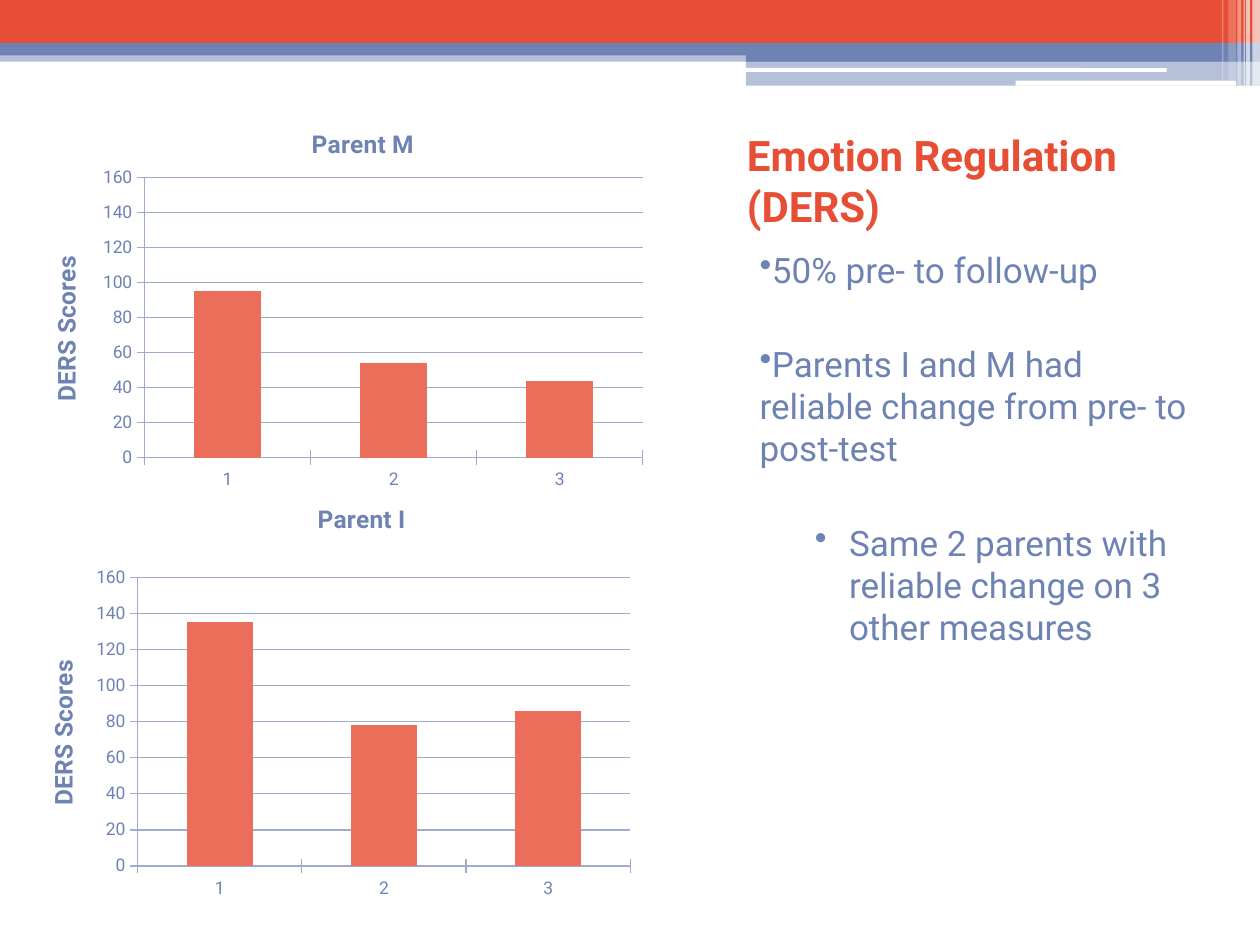
import dataclasses

import lxml.etree
import pptx
import pptx.chart.data
import pptx.dml.color
import pptx.enum.chart
import pptx.enum.shapes
import pptx.enum.text
import pptx.oxml
import pptx.oxml.ns
import pptx.util
from pptx.util import Inches

SHAPES = pptx.enum.shapes.MSO_SHAPE
qn = pptx.oxml.ns.qn


@dataclasses.dataclass(frozen=True)
class Theme:
    font: str = "Roboto"
    red: str = "E64F36"
    blue: str = "6E83B3"
    white: str = "FFFFFF"
    bar: str = "EA6E59"
    grid: str = "A0AACB"
    title_size: int = 24
    body_size: int = 20
    chart_title_size: int = 14
    chart_size: int = 10


THEME = Theme()


def rgb(color):
    return pptx.dml.color.RGBColor.from_string(color)


def style_font(font, size, color, bold=False):
    font.name = THEME.font
    font.size = pptx.util.Pt(size)
    font.color.rgb = rgb(color)
    font.bold = bold


def add_bar(slide, box, color, opacity=100, kind=SHAPES.RECTANGLE):
    shape = slide.shapes.add_shape(kind, *map(Inches, box))
    shape.shadow.inherit = False
    shape.fill.solid()
    shape.fill.fore_color.rgb = rgb(color)
    shape.line.fill.background()
    if opacity < 100:
        color_element = shape.fill._xPr.find(qn("a:solidFill"))[0]
        alpha = lxml.etree.SubElement(color_element, qn("a:alpha"))
        alpha.set("val", str(opacity * 1000))


def add_banner(slide, box):
    """Coloured bands across the top, with pale stripes at the right end."""
    left, top, width, height = box
    right = left + width
    step_left = left + 5.92
    step_width = right - step_left
    add_bar(slide, (left, top + 0.4, width, 0.09), THEME.blue, 50)
    add_bar(slide, (left, top, width, 0.34), THEME.red)
    add_bar(slide, (left, top + 0.34, width, 0.1), THEME.blue)
    add_bar(slide, (step_left, top + 0.39, step_width, 0.1), THEME.blue)
    add_bar(slide, (step_left, top + 0.48, step_width, 0.2), THEME.blue, 50)
    for offset, drop, length, thickness in ((5.91, 0.54, 3.35, 0.03),
                                            (8.06, 0.64, 1.75, 0.04)):
        add_bar(slide, (left + offset, top + drop, length, thickness),
                THEME.white, kind=SHAPES.ROUNDED_RECTANGLE)
    stripes = (  # distance from the right edge, width, height, opacity
        (0.06, 0.06, height, 65),
        (0.11, 0.03, height, 65),
        (0.13, 0.01, height, 60),
        (0.18, 0.03, height, 40),
        (0.25, 0.06, height - 0.04, 20),
        (0.3, 0.01, height - 0.04, 30),
    )
    for distance, stripe_width, stripe_height, opacity in stripes:
        add_bar(slide, (right - distance, top, stripe_width, stripe_height),
                THEME.white, opacity)


def add_text_frame(slide, box):
    frame = slide.shapes.add_textbox(*map(Inches, box)).text_frame
    frame.word_wrap = True
    return frame


def add_title(slide, box, text):
    frame = add_text_frame(slide, box)
    frame.vertical_anchor = pptx.enum.text.MSO_ANCHOR.BOTTOM
    run = frame.paragraphs[0].add_run()
    run.text = text
    style_font(run.font, THEME.title_size, THEME.red, bold=True)


def set_bullet(paragraph, margin, indent):
    properties = paragraph._p.get_or_add_pPr()
    properties.set("marL", str(Inches(margin)))
    properties.set("indent", str(Inches(indent)))
    bullet_color = lxml.etree.SubElement(properties, qn("a:buClr"))
    lxml.etree.SubElement(bullet_color, qn("a:srgbClr")).set("val", THEME.blue)
    lxml.etree.SubElement(properties, qn("a:buChar")).set("char", "•")


def add_findings(slide, box, findings):
    """Bulleted findings, each given as (text, level)."""
    frame = add_text_frame(slide, box)
    indents = ((0.01, 0), (0.72, -0.27))
    for index, (text, level) in enumerate(findings):
        paragraph = frame.add_paragraph() if index else frame.paragraphs[0]
        paragraph.level = level
        paragraph.space_before = pptx.util.Pt(30 if index else 3)
        set_bullet(paragraph, *indents[level])
        run = paragraph.add_run()
        run.text = text
        style_font(run.font, THEME.body_size, THEME.blue)


def set_heading(owner, text):
    """Give a chart or an axis its bold title."""
    owner.has_title = True
    heading = owner.chart_title if hasattr(owner, "chart_title") else owner.axis_title
    run = heading.text_frame.paragraphs[0].add_run()
    run.text = text
    style_font(run.font, THEME.chart_title_size, THEME.blue, bold=True)


def set_plot_area(chart, plot_box):
    plot_area = chart._chartSpace.chart.plotArea
    for old_layout in plot_area.findall(qn("c:layout")):
        plot_area.remove(old_layout)
    layout = lxml.etree.Element(qn("c:layout"))
    manual = lxml.etree.SubElement(layout, qn("c:manualLayout"))
    settings = [("layoutTarget", "inner"), ("xMode", "edge"), ("yMode", "edge")]
    settings += zip("xywh", plot_box)
    for name, value in settings:
        lxml.etree.SubElement(manual, qn("c:" + name)).set("val", str(value))
    plot_area.insert(0, layout)


def add_score_chart(slide, box, title, scores, plot_box):
    data = pptx.chart.data.CategoryChartData()
    data.categories = ["1", "2", "3"]
    data.add_series("Series 1", scores)
    chart = slide.shapes.add_chart(
        pptx.enum.chart.XL_CHART_TYPE.COLUMN_CLUSTERED, *map(Inches, box), data).chart
    style_font(chart.font, THEME.chart_size, THEME.blue)
    chart.has_legend = False
    set_heading(chart, title)
    set_plot_area(chart, plot_box)

    plot = chart.plots[0]
    plot.vary_by_categories = False
    plot.gap_width = 150
    fill = plot.series[0].format.fill
    fill.solid()
    fill.fore_color.rgb = rgb(THEME.bar)

    scale = chart.value_axis
    scale.minimum_scale, scale.maximum_scale, scale.major_unit = 0, 160, 20
    scale.has_major_gridlines = True
    set_heading(scale, "DERS Scores")
    for axis in (chart.category_axis, scale):
        axis.major_tick_mark = pptx.enum.chart.XL_TICK_MARK.CROSS
    for ruled in (chart.category_axis, scale, scale.major_gridlines):
        ruled.format.line.color.rgb = rgb(THEME.grid)
        ruled.format.line.width = pptx.util.Pt(0.75)


def main():
    presentation = pptx.Presentation()
    presentation.slide_width = Inches(10)
    presentation.slide_height = Inches(7.5)
    slide = presentation.slides.add_slide(presentation.slide_layouts[6])
    add_banner(slide, (0, 0, 10, 0.68))
    add_title(slide, (5.83, 0.92, 3.7, 0.96), "Emotion Regulation (DERS)")
    add_findings(slide, (5.92, 1.92, 3.7, 5.17), (
        ("50% pre- to follow-up", 0),
        ("Parents I and M had reliable change from pre- to post-test", 0),
        ("Same 2 parents with reliable change on 3 other measures", 1),
    ))
    add_score_chart(slide, (0.17, 0.85, 5.42, 3.48), "Parent M", (95, 54, 44),
                    (0.18, 0.16, 0.73, 0.64))
    add_score_chart(slide, (0.33, 3.83, 5.08, 3.42), "Parent I", (135, 78, 86),
                    (0.15, 0.22, 0.77, 0.67))
    presentation.save("out.pptx")


if __name__ == "__main__":
    main()
